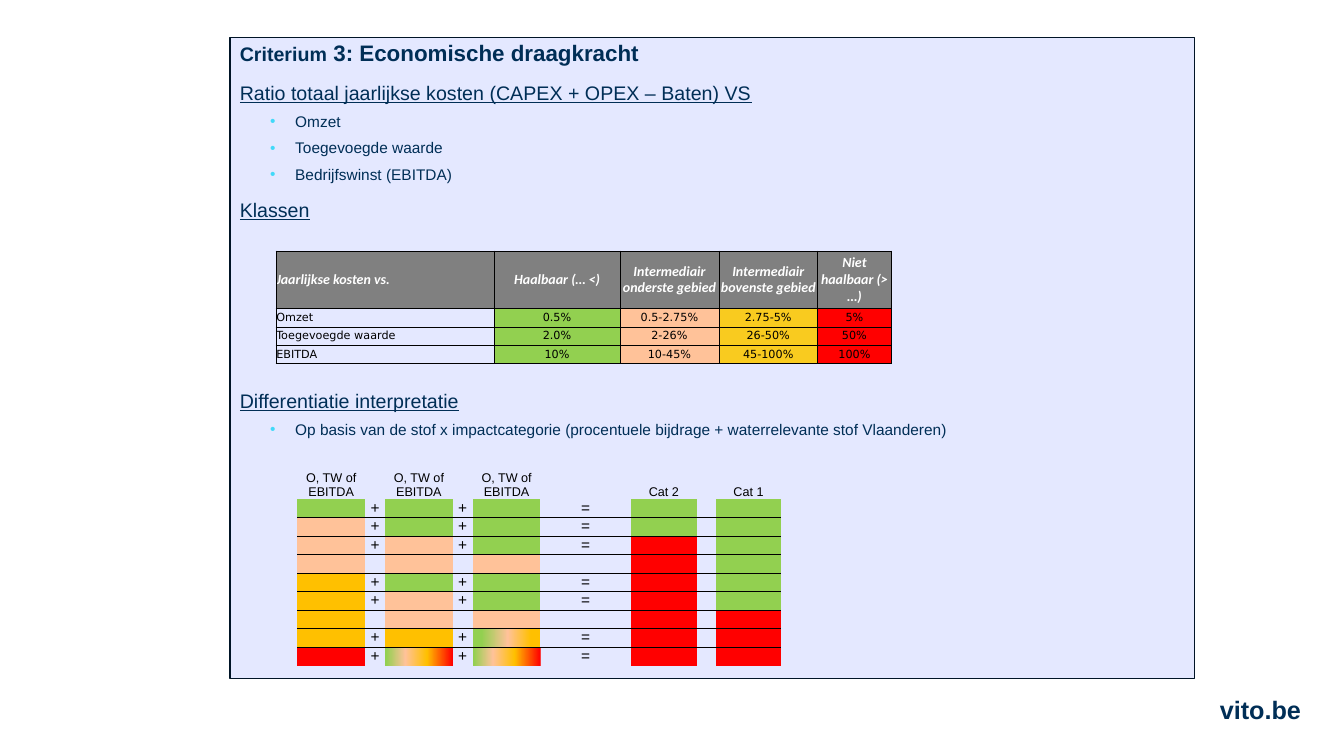
from dataclasses import dataclass

from lxml import etree
from pptx import Presentation
from pptx.dml.color import RGBColor
from pptx.enum import shapes, text
from pptx.oxml import parse_xml
from pptx.oxml.ns import nsdecls, qn
from pptx.util import Inches, Pt

COLORS = {
    "navy": "002E56", "outline": "001426", "panel": "E4E8FF", "bullet": "41D9F9",
    "black": "000000", "white": "FFFFFF", "gray": "808080", "green": "92D050",
    "peach": "FFC299", "yellow": "F9CB1F", "amber": "FFC000", "red": "FF0000",
}
NO_STYLE = "{2D5ABB26-0587-4C30-8999-92F81FD0307C}"
LEFT, CENTER, JUSTIFY = text.PP_ALIGN.LEFT, text.PP_ALIGN.CENTER, text.PP_ALIGN.JUSTIFY
TOP, MIDDLE, BOTTOM = (text.MSO_ANCHOR.TOP, text.MSO_ANCHOR.MIDDLE,
                       text.MSO_ANCHOR.BOTTOM)


@dataclass
class Line:
    text: str
    bullet: bool = False
    before: float = 12


@dataclass
class Grid:
    left: float
    top: float
    widths: list[float]
    heights: list[float]


LINES = [
    Line("Ratio totaal jaarlijkse kosten (CAPEX + OPEX – Baten) VS"),
    Line("Omzet", True, 7),
    Line("Toegevoegde waarde", True, 7),
    Line("Bedrijfswinst (EBITDA)", True, 7),
    Line("Klassen"),
    Line("Differentiatie interpretatie", before=121),
    Line("Op basis van de stof x impactcategorie (procentuele bijdrage + "
         "waterrelevante stof Vlaanderen)", True, 7),
]

CLASS_GRID = Grid(2.74, 2.49, [2.16, 1.25, 0.98, 0.98, 0.73], [0.57] + [0.55 / 3] * 3)
CLASS_FILLS = [None, "green", "peach", "yellow", "red"]
CLASS_ROWS = [
    ["Jaarlijkse kosten vs.", "Haalbaar (… <)", "Intermediair onderste gebied",
     "Intermediair bovenste gebied", "Niet haalbaar (> …)"],
    ["Omzet", "0.5%", "0.5-2.75%", "2.75-5%", "5%"],
    ["Toegevoegde waarde", "2.0%", "2-26%", "26-50%", "50%"],
    ["EBITDA", "10%", "10-45%", "45-100%", "100%"],
]

RULE_GRID = Grid(2.95, 4.65, [0.67, 0.2, 0.67, 0.2, 0.67, 0.9, 0.65, 0.19, 0.65],
                 [0.3] + [1.65 / 9] * 9)
RULE_HEADS = ["O, TW of EBITDA", "", "O, TW of EBITDA", "", "O, TW of EBITDA", "",
              "Cat 2", "", "Cat 1"]
# One letter per cell: a fill from RULE_FILLS or RULE_BLENDS, or the sign shown
RULE_ROWS = [
    "G+G+G=G G",
    "P+G+G=G G",
    "P+P+G=R G",
    "P P P R G",
    "A+G+G=R G",
    "A+P+G=R G",
    "A P P R R",
    "A+A+X=R R",
    "R+Y+Y=R R",
]
RULE_FILLS = {"G": "green", "P": "peach", "A": "amber", "R": "red"}
RULE_BLENDS = {
    "X": [(13, "green"), (52, "peach"), (86, "amber")],
    "Y": [(1, "green"), (30, "peach"), (62, "amber"), (100, "red")],
}


def rgb(name: str) -> RGBColor:
    return RGBColor.from_string(COLORS[name])


def add_run(p, content: str, *, size: float, font: str = "Arial", color: str = "navy",
            bold: bool = False, italic: bool = False, underline: bool = False) -> None:
    r = p.add_run()
    r.text = content
    f = r.font
    f.size, f.name, f.bold, f.italic, f.underline = Pt(size), font, bold, italic, underline
    f.color.rgb = rgb(color)


def add_bullet(p) -> None:
    p.level = 1
    pPr = p._p.get_or_add_pPr()
    pPr.set("marL", str(Inches(0.55)))
    pPr.set("indent", str(Inches(-0.25)))
    color = etree.SubElement(pPr, qn("a:buClr"))
    etree.SubElement(color, qn("a:srgbClr"), val=COLORS["bullet"])
    etree.SubElement(pPr, qn("a:buFont"), typeface="Arial")
    etree.SubElement(pPr, qn("a:buChar"), char="•")


def add_panel(s) -> None:
    sp = s.shapes.add_shape(shapes.MSO_SHAPE.RECTANGLE, Inches(2.28), Inches(0.37),
                            Inches(9.57), Inches(6.36))
    sp.shadow.inherit = False
    sp.fill.solid()
    sp.fill.fore_color.rgb = rgb("panel")
    sp.line.color.rgb = rgb("outline")
    sp.line.width = Pt(1)
    tf = sp.text_frame
    tf.word_wrap = True
    tf.vertical_anchor = TOP
    p = tf.paragraphs[0]
    p.alignment, p.line_spacing = LEFT, 0.9
    add_run(p, "Criterium", size=14, bold=True)
    add_run(p, " 3: Economische draagkracht", size=16, bold=True)
    for line in LINES:
        p = tf.add_paragraph()
        if line.bullet:
            add_bullet(p)
        p.alignment, p.line_spacing, p.space_before = LEFT, 0.9, Pt(line.before)
        add_run(p, line.text, size=11 if line.bullet else 14, underline=not line.bullet)


def add_grid(s, grid: Grid):
    """Add an unstyled table with the column widths and row heights of the grid."""
    frame = s.shapes.add_table(len(grid.heights), len(grid.widths), Inches(grid.left),
                               Inches(grid.top), Inches(sum(grid.widths)),
                               Inches(sum(grid.heights)))
    table = frame.table
    table.first_row = table.horz_banding = False
    table._tbl.tblPr.find(qn("a:tableStyleId")).text = NO_STYLE
    for column, width in zip(table.columns, grid.widths):
        column.width = Inches(width)
    for row, height in zip(table.rows, grid.heights):
        row.height = Inches(height)
    return table


def set_borders(cell, widths: dict[str, float]) -> None:
    """Draw black borders; keys are sides in the order L, R, T, B."""
    tcPr = cell._tc.get_or_add_tcPr()
    for side, width in widths.items():
        tcPr.append(parse_xml(
            f'<a:ln{side} {nsdecls("a")} w="{Pt(width)}"><a:solidFill>'
            f'<a:srgbClr val="{COLORS["black"]}"/></a:solidFill></a:ln{side}>'))


def set_blend(cell, stops: list[tuple[int, str]]) -> None:
    """Fill the cell with a gradient from left to right."""
    marks = "".join(f'<a:gs pos="{pos * 1000}"><a:srgbClr val="{COLORS[name]}"/></a:gs>'
                    for pos, name in stops)
    cell._tc.get_or_add_tcPr().append(parse_xml(
        f'<a:gradFill {nsdecls("a")} rotWithShape="1"><a:gsLst>{marks}</a:gsLst>'
        '<a:lin ang="0" scaled="0"/></a:gradFill>'))


def set_fill(cell, name: str | None) -> None:
    if name:
        cell.fill.solid()
        cell.fill.fore_color.rgb = rgb(name)
    else:
        cell.fill.background()


def set_text(cell, content: str, *, align=CENTER, anchor=MIDDLE, **style) -> None:
    cell.margin_left = cell.margin_right = cell.margin_top = cell.margin_bottom = 0
    cell.vertical_anchor = anchor
    p = cell.text_frame.paragraphs[0]
    p.alignment = align
    if content:
        add_run(p, content, **style)
    else:
        p._p.get_or_add_endParaRPr().set("sz", "800")


def add_class_table(s) -> None:
    table = add_grid(s, CLASS_GRID)
    head = dict(size=10, font="Calibri", color="white", bold=True, italic=True)
    body = dict(size=8, font="DejaVu Sans", color="black")
    last = len(CLASS_FILLS) - 1
    for i, row in enumerate(CLASS_ROWS):
        for j, content in enumerate(row):
            cell = table.cell(i, j)
            set_text(cell, content, align=CENTER if j else JUSTIFY,
                     **(body if i else head))
            set_borders(cell, {"L": 0.5 if j else 1, "R": 1 if j == last else 0.5,
                               "T": 0.5, "B": 0.5})
            set_fill(cell, CLASS_FILLS[j] if i else "gray")


def add_rule_table(s) -> None:
    table = add_grid(s, RULE_GRID)
    for j, content in enumerate(RULE_HEADS):
        cell = table.cell(0, j)
        set_text(cell, content, anchor=BOTTOM, size=9, color="black")
        set_fill(cell, None)
    for i, row in enumerate(RULE_ROWS, start=1):
        sides = {"T": 1} if i > 1 else {}
        if i < len(RULE_ROWS):
            sides["B"] = 1
        for j, code in enumerate(row):
            cell = table.cell(i, j)
            set_text(cell, code if code in "+=" else "", anchor=TOP, size=11,
                     color="black")
            set_borders(cell, sides)
            if code in RULE_BLENDS:
                set_blend(cell, RULE_BLENDS[code])
            else:
                set_fill(cell, RULE_FILLS.get(code))


def main() -> None:
    prs = Presentation()
    prs.slide_width, prs.slide_height = Inches(13.33), Inches(7.5)
    s = prs.slides.add_slide(prs.slide_layouts[6])
    site = s.shapes.add_textbox(Inches(12), Inches(6.84), Inches(1.56 - 0.23), Inches(0.4))
    site.text_frame.word_wrap = True
    add_run(site.text_frame.paragraphs[0], "vito.be", size=18, bold=True)
    add_panel(s)
    add_class_table(s)
    add_rule_table(s)
    prs.save("out.pptx")


if __name__ == "__main__":
    main()
